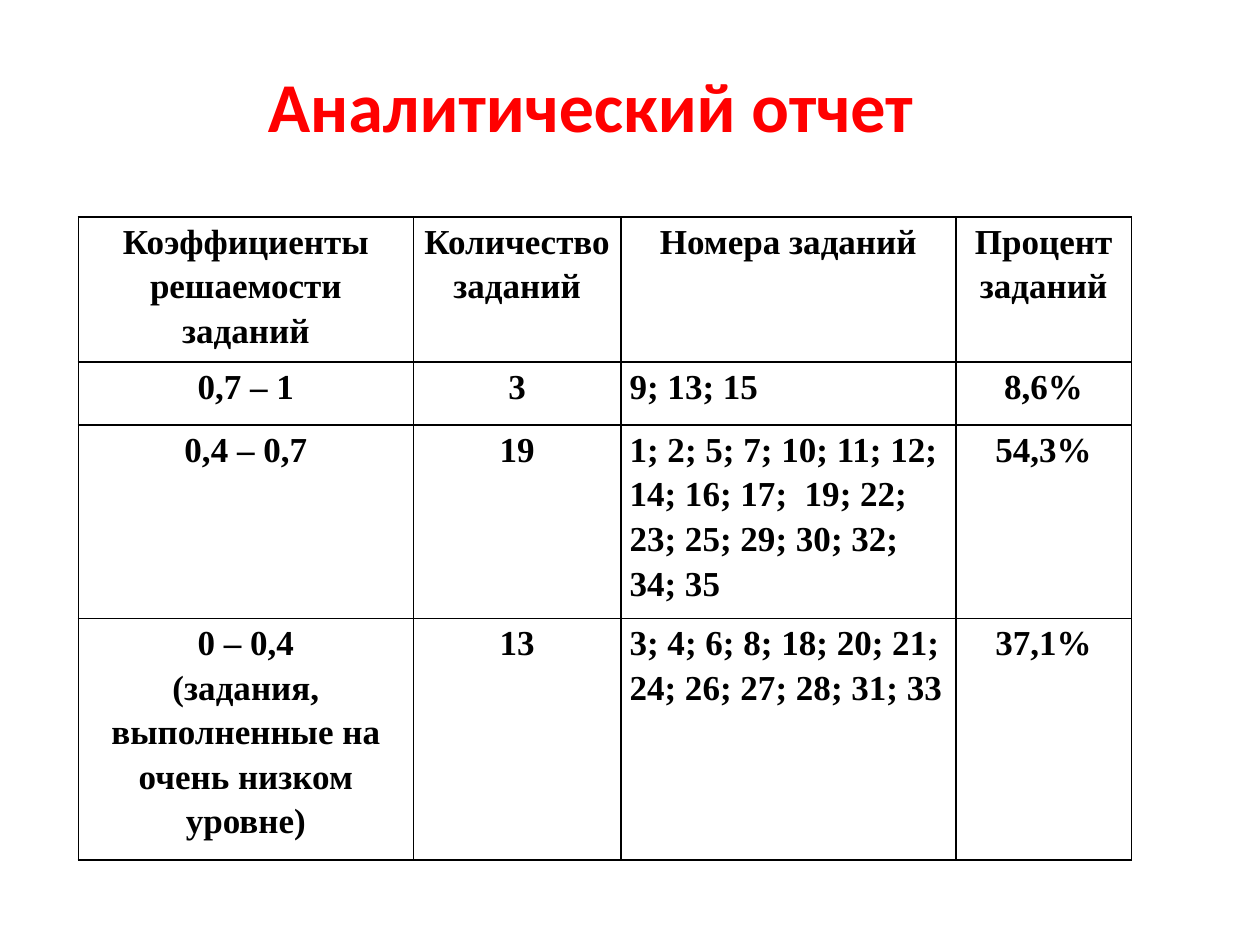
from pptx import Presentation
from pptx.util import Pt
from pptx.dml.color import RGBColor
from pptx.enum.text import PP_ALIGN, MSO_ANCHOR
from pptx.oxml.ns import qn
from lxml.etree import SubElement


def color(code):
    return RGBColor.from_string(code)


def assign(obj, vals):
    for name, val in vals.items():
        setattr(obj, name, val)


class Deck:
    title = dict(name="Calibri", size=Pt(40), bold=True)
    body = dict(name="Times New Roman", size=Pt(20), bold=True)
    red, black = "FF0000", "000000"

    def __init__(self, wide, high):
        self.prs = Presentation()
        assign(self.prs, dict(slide_width=Pt(wide), slide_height=Pt(high)))
        self.slide = self.prs.slides.add_slide(self.prs.slide_layouts[6])

    def label(self, frame, text, font, ink, para):
        frame.text = text
        for par in frame.paragraphs:
            assign(par, para)
            for run in par.runs:
                assign(run.font, font)
                run.font.color.rgb = color(ink)

    def head(self, text, box):
        frame = self.slide.shapes.add_textbox(*map(Pt, box)).text_frame
        assign(frame, dict(word_wrap=True, margin_bottom=0,
                           vertical_anchor=MSO_ANCHOR.BOTTOM))
        self.label(frame, text, self.title, self.red,
                   dict(alignment=PP_ALIGN.LEFT))

    def border(self, cell):
        props = cell._tc.get_or_add_tcPr()
        for tag in ("a:lnL", "a:lnR", "a:lnT", "a:lnB"):
            line = SubElement(props, qn(tag), w=str(Pt(1)))
            fill = SubElement(line, qn("a:solidFill"))
            SubElement(fill, qn("a:srgbClr"), val=self.black)

    def table(self, rows, left, top, cols, highs, flush):
        grid = self.slide.shapes.add_table(
            len(rows), len(cols), Pt(left), Pt(top),
            Pt(sum(cols)), Pt(sum(highs))).table
        assign(grid, dict(first_row=False, horz_banding=False))
        for col, wide in zip(grid.columns, cols):
            col.width = Pt(wide)
        for row, high, texts in zip(grid.rows, highs, rows):
            row.height = Pt(high)
            for num, (cell, text) in enumerate(zip(row.cells, texts)):
                assign(cell, dict(margin_left=Pt(5), margin_right=Pt(5),
                                  margin_top=0, margin_bottom=0))
                # Below the header, the flush column is set left
                side = (PP_ALIGN.LEFT if num == flush and texts is not rows[0]
                        else PP_ALIGN.CENTER)
                self.label(cell.text_frame, text, self.body, self.black,
                           dict(alignment=side, line_spacing=1.15))
                self.border(cell)
                cell.fill.background()

    def save(self):
        self.prs.save("out.pptx")


def main():
    deck = Deck(720, 540)

    # Title
    deck.head("Аналитический отчет", (146, 34, 432, 50))

    # Report table
    rows = [
        ("Коэффициенты решаемости заданий", "Количество заданий",
         "Номера заданий", "Процент заданий"),
        ("0,7 – 1", "3", "9; 13; 15", "8,6%"),
        ("0,4 – 0,7", "19",
         "1; 2; 5; 7; 10; 11; 12; 14; 16; 17;  19; 22; 23; 25; 29; 30; 32; "
         "34; 35", "54,3%"),
        ("0 – 0,4\n(задания, выполненные на очень низком уровне)", "13",
         "3; 4; 6; 8; 18; 20; 21; 24; 26; 27; 28; 31; 33", "37,1%"),
    ]
    deck.table(rows, 44.8, 124, (191.4, 118.6, 191.4, 100.4),
               (72, 36, 107.4, 72), flush=2)
    deck.save()


if __name__ == "__main__":
    main()
